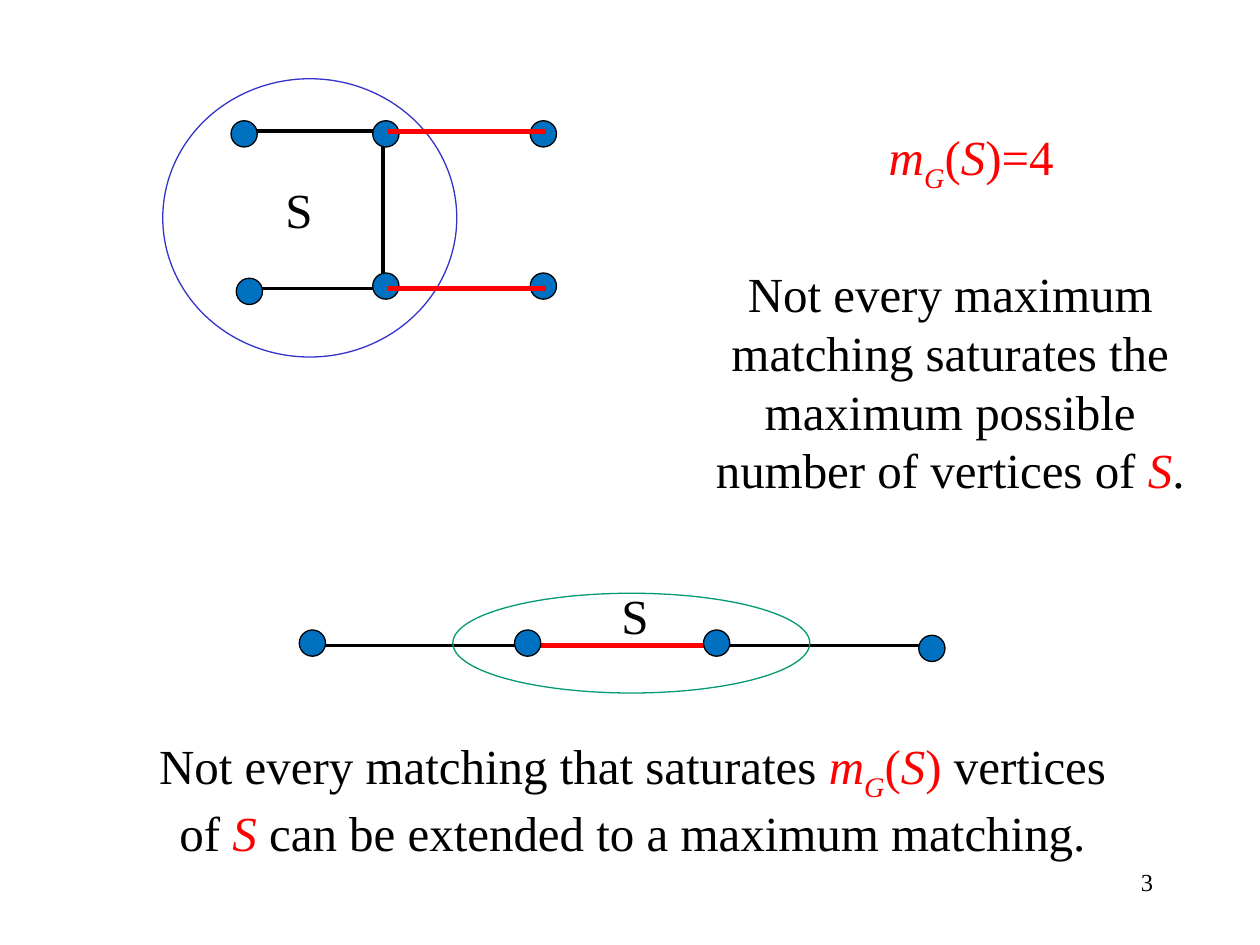
"""Builds the slide on maximum matchings and saturated vertices of S."""
from dataclasses import dataclass

from lxml import etree
from pptx import Presentation
from pptx.dml.color import RGBColor
from pptx.enum.shapes import MSO_CONNECTOR, MSO_SHAPE
from pptx.enum.text import PP_ALIGN
from pptx.oxml.ns import qn
from pptx.util import Emu, Pt

PX = 9525
STRAIGHT = MSO_CONNECTOR.STRAIGHT
OVAL = MSO_SHAPE.OVAL
CENTER, RIGHT = PP_ALIGN.CENTER, PP_ALIGN.RIGHT


@dataclass(frozen=True)
class Theme:
    font: str = "Times New Roman"
    ink: str = "000000"
    accent: str = "FF0000"
    vertex: str = "0070C0"
    square_set: str = "3333CC"
    path_set: str = "009973"
    body: int = 28
    number: int = 14
    outline: float = 0.75
    edge: int = 2
    matched: int = 3


THEME = Theme()
VERTEX_SIZE = 20

STYLES = {
    "plain": (THEME.ink, False, False),
    "red": (THEME.accent, False, False),
    "math": (THEME.accent, True, False),
    "sub": (THEME.accent, True, True),
}
MEASURE = [("m", "math"), ("G", "sub"), ("(", "red"), ("S", "math")]

TEXTS = [
    ((208, 132, 32, 55), [("S", "plain")], THEME.body, CENTER),
    ((596, 92, 288, 55), MEASURE + [(")=4", "red")], THEME.body, CENTER),
    ((532, 196, 384, 191), [
        ("Not every maximum matching saturates the maximum possible "
         "number of vertices of ", "plain"),
        ("S", "math"), (".", "plain")], THEME.body, CENTER),
    ((464, 441, 32, 55), [("S", "plain")], THEME.body, CENTER),
    ((100, 556, 764, 100), [
        ("Not every matching that saturates ", "plain"), *MEASURE, (")", "red"),
        (" vertices of ", "plain"), ("S", "math"),
        (" can be extended to a maximum matching.", "plain")],
     THEME.body, CENTER),
    ((688, 656, 200, 48), [("3", "plain")], THEME.number, RIGHT),
]

PATH_EDGES = [(232, 492, 708, 492)]
PATH_MATCHING = [(404, 492, 552, 492)]
PATH_VERTICES = [(228, 480), (392, 480), (536, 480), (700, 484)]
PATH_SET = (345, 452, 272, 76)

SQUARE_EDGES = [(184, 100, 412, 100), (184, 220, 412, 220), (292, 100, 292, 220)]
SQUARE_MATCHING = [(296, 100, 416, 100), (296, 220, 416, 220)]
SQUARE_VERTICES = [(176, 92), (284, 92), (404, 92),
                   (180, 212), (284, 208), (404, 208)]
SQUARE_SET = (124, 60, 224, 212)


def emu(lengths):
    return [Emu(length * PX) for length in lengths]


def rgb(color):
    return RGBColor.from_string(color)


def add_edges(slide, edges, color, width):
    for ends in edges:
        edge = slide.shapes.add_connector(STRAIGHT, *emu(ends))
        edge.line.color.rgb = rgb(color)
        edge.line.width = Pt(width)
        etree.SubElement(edge._element.spPr, qn("a:effectLst"))


def add_oval(slide, box, outline, fill=None):
    oval = slide.shapes.add_shape(OVAL, *emu(box))
    oval.shadow.inherit = False
    oval.line.color.rgb = rgb(outline)
    oval.line.width = Pt(THEME.outline)
    if fill:
        oval.fill.solid()
        oval.fill.fore_color.rgb = rgb(fill)
    else:
        oval.fill.background()


def add_vertices(slide, corners):
    for corner in corners:
        add_oval(slide, (*corner, VERTEX_SIZE, VERTEX_SIZE), THEME.ink, THEME.vertex)


def add_text(slide, box, pieces, size, align):
    frame = slide.shapes.add_textbox(*emu(box)).text_frame
    frame.word_wrap = True
    paragraph = frame.paragraphs[0]
    paragraph.alignment = align
    for words, style in pieces:
        color, italic, subscript = STYLES[style]
        run = paragraph.add_run()
        run.text = words
        run.font.name = THEME.font
        run.font.size = Pt(size)
        run.font.italic = italic
        run.font.color.rgb = rgb(color)
        if subscript:
            run._r.get_or_add_rPr().set("baseline", "-25000")


def main():
    deck = Presentation()
    deck.slide_width, deck.slide_height = emu((960, 720))
    slide = deck.slides.add_slide(deck.slide_layouts[6])

    add_edges(slide, PATH_EDGES, THEME.ink, THEME.edge)
    add_edges(slide, PATH_MATCHING, THEME.accent, THEME.matched)
    add_vertices(slide, PATH_VERTICES)
    add_oval(slide, PATH_SET, THEME.path_set)

    add_edges(slide, SQUARE_EDGES, THEME.ink, THEME.edge)
    add_vertices(slide, SQUARE_VERTICES)
    add_oval(slide, SQUARE_SET, THEME.square_set)
    add_edges(slide, SQUARE_MATCHING, THEME.accent, THEME.matched)

    for text in TEXTS:
        add_text(slide, *text)
    deck.save("out.pptx")


if __name__ == "__main__":
    main()
